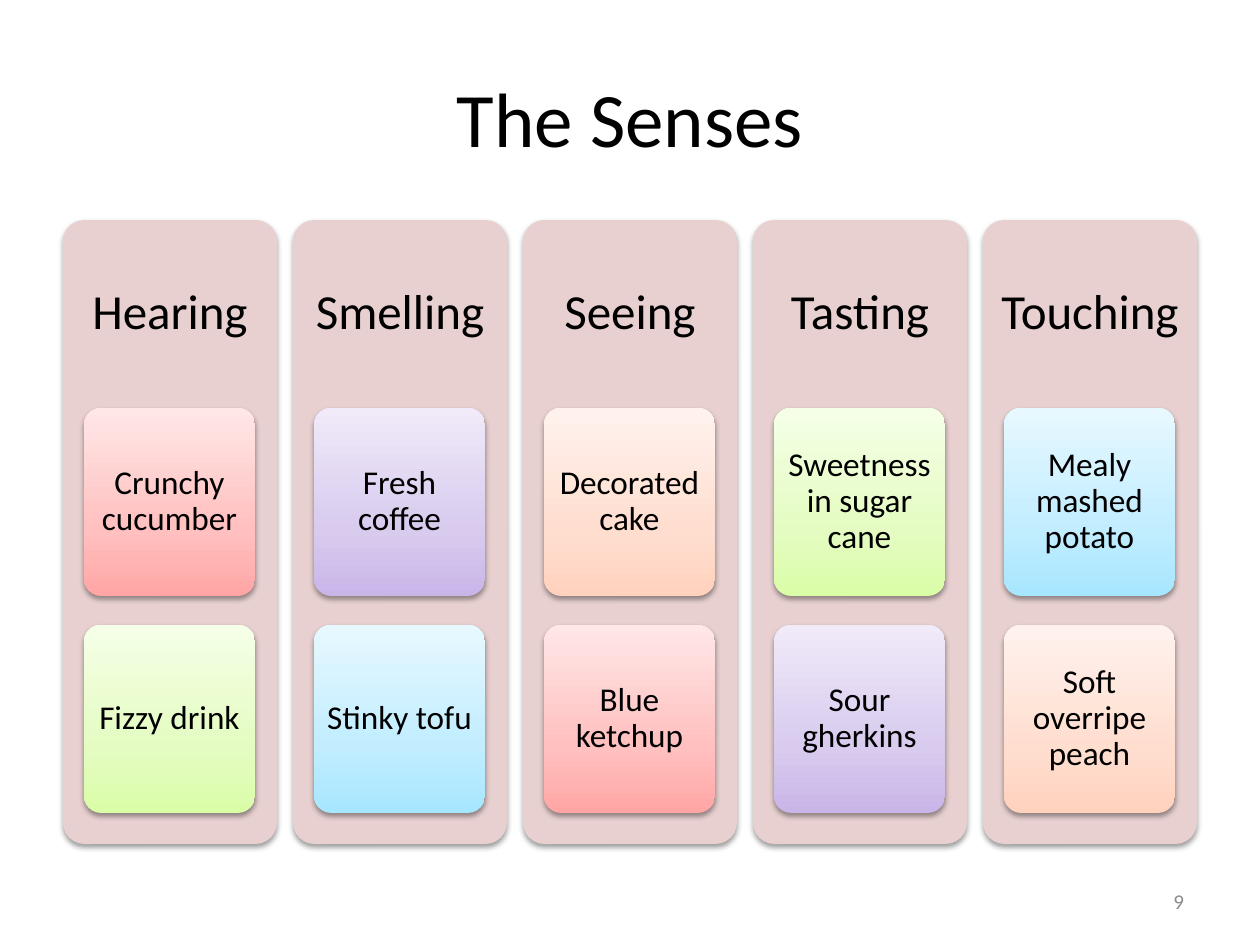
from copy import deepcopy
from dataclasses import dataclass

from pptx import Presentation
from pptx.dml.color import RGBColor
from pptx.enum.shapes import MSO_SHAPE
from pptx.enum.text import MSO_ANCHOR, PP_ALIGN
from pptx.oxml import parse_xml
from pptx.oxml.ns import nsdecls
from pptx.util import Pt

ROUNDED = MSO_SHAPE.ROUNDED_RECTANGLE
MIDDLE = MSO_ANCHOR.MIDDLE
CENTER, RIGHT = PP_ALIGN.CENTER, PP_ALIGN.RIGHT
EMU_PER_PX = 914400 / 126


@dataclass(frozen=True)
class Theme:
    font: str = "Calibri"
    ink: str = "000000"
    muted: str = "8C8C8C"
    panel: str = "E8D0D0"
    title_size: int = 44
    heading_size: int = 28
    card_size: int = 19
    number_size: int = 12
    # Card gradients, from the bottom edge to the top edge
    red: tuple = ("FFA6A5", "FFC0BF", "FFE7E7")
    green: tuple = ("DAFDA7", "E4FCC2", "F5FFE7")
    purple: tuple = ("C9B5E8", "D8CBEE", "F0EAF9")
    blue: tuple = ("A7E6FF", "C1EDFF", "E7F8FF")
    orange: tuple = ("FFD2BD", "FFDED0", "FFF2ED")
    stops: tuple = (0, 0.35, 1)


theme = Theme()
SHADOW = (
    f'<a:outerShdw {nsdecls("a")} blurRad="40000" dist="20000" dir="5400000" rotWithShape="0">'
    '<a:srgbClr val="000000"><a:alpha val="38000"/></a:srgbClr></a:outerShdw>'
)


def write(box, text, size, color=theme.ink, align=CENTER, insets=(13, 6, 13, 6), spacing=1.0):
    """Put one vertically centred paragraph in box; insets are left, top, right, bottom in px."""
    frame = box.text_frame
    frame.word_wrap = True
    frame.vertical_anchor = MIDDLE
    (frame.margin_left, frame.margin_top,
     frame.margin_right, frame.margin_bottom) = [round(px * EMU_PER_PX) for px in insets]
    para = frame.paragraphs[0]
    para.alignment = align
    para.line_spacing = spacing
    span = para.add_run()
    span.text = text
    span.font.name = theme.font
    span.font.size = Pt(size)
    span.font.color.rgb = RGBColor.from_string(color)


def add_rounded(page, *frame_px):
    """Add an unlined rounded rectangle with a soft shadow below it."""
    box = page.shapes.add_shape(ROUNDED, *[round(px * EMU_PER_PX) for px in frame_px])
    box.adjustments[0] = 0.1
    box.line.fill.background()
    box.shadow.inherit = False
    box._element.spPr.find("{*}effectLst").append(parse_xml(SHADOW))
    return box


deck = Presentation()
deck.slide_width = round(1260 * EMU_PER_PX)
deck.slide_height = round(945 * EMU_PER_PX)
page = deck.slides.add_slide(deck.slide_layouts[5])

title = page.shapes.title
title.left, title.top, title.width, title.height = [
    round(px * EMU_PER_PX) for px in (63, 38, 1134, 157)
]
write(title, "The Senses", theme.title_size)

senses = [
    ("Hearing", [("Crunchy cucumber", theme.red), ("Fizzy drink", theme.green)]),
    ("Smelling", [("Fresh coffee", theme.purple), ("Stinky tofu", theme.blue)]),
    ("Seeing", [("Decorated cake", theme.orange), ("Blue ketchup", theme.red)]),
    ("Tasting", [("Sweetness in sugar cane", theme.green), ("Sour gherkins", theme.purple)]),
    ("Touching", [("Mealy mashed potato", theme.blue), ("Soft overripe peach", theme.orange)]),
]
PANEL_LEFT, PANEL_TOP, PANEL_WIDTH, PANEL_HEIGHT, PANEL_PITCH = 63, 220, 214, 624, 230
CARD_TOP, CARD_WIDTH, CARD_HEIGHT, CARD_PITCH = 408, 171, 188, 217
# The rounded corners already narrow the text area, so these insets stay small
HEADING_HEIGHT, HEADING_INSET, CARD_INSET = 187, 8, 5

for column, (sense, examples) in enumerate(senses):
    left = PANEL_LEFT + column * PANEL_PITCH
    panel = add_rounded(page, left, PANEL_TOP, PANEL_WIDTH, PANEL_HEIGHT)
    panel.fill.solid()
    panel.fill.fore_color.rgb = RGBColor.from_string(theme.panel)
    below_heading = PANEL_HEIGHT - HEADING_HEIGHT + HEADING_INSET
    write(panel, sense, theme.heading_size, spacing=0.9,
          insets=(HEADING_INSET, HEADING_INSET, HEADING_INSET, below_heading))

    card_left = left + (PANEL_WIDTH - CARD_WIDTH) // 2
    for row, (example, gradient) in enumerate(examples):
        card = add_rounded(page, card_left, CARD_TOP + row * CARD_PITCH, CARD_WIDTH, CARD_HEIGHT)
        card.fill.gradient()
        card.fill.gradient_angle = 90
        stop_list = card._element.spPr.find("{*}gradFill/{*}gsLst")
        stop_list.append(deepcopy(stop_list[0]))
        for stop, position, color in zip(card.fill.gradient_stops, theme.stops, gradient):
            stop.position = position
            stop.color.rgb = RGBColor.from_string(color)
        write(card, example, theme.card_size, spacing=0.9, insets=(CARD_INSET,) * 4)

number = page.shapes.add_textbox(*[round(px * EMU_PER_PX) for px in (903, 876, 294, 50)])
write(number, "9", theme.number_size, theme.muted, RIGHT)

deck.save("out.pptx")
